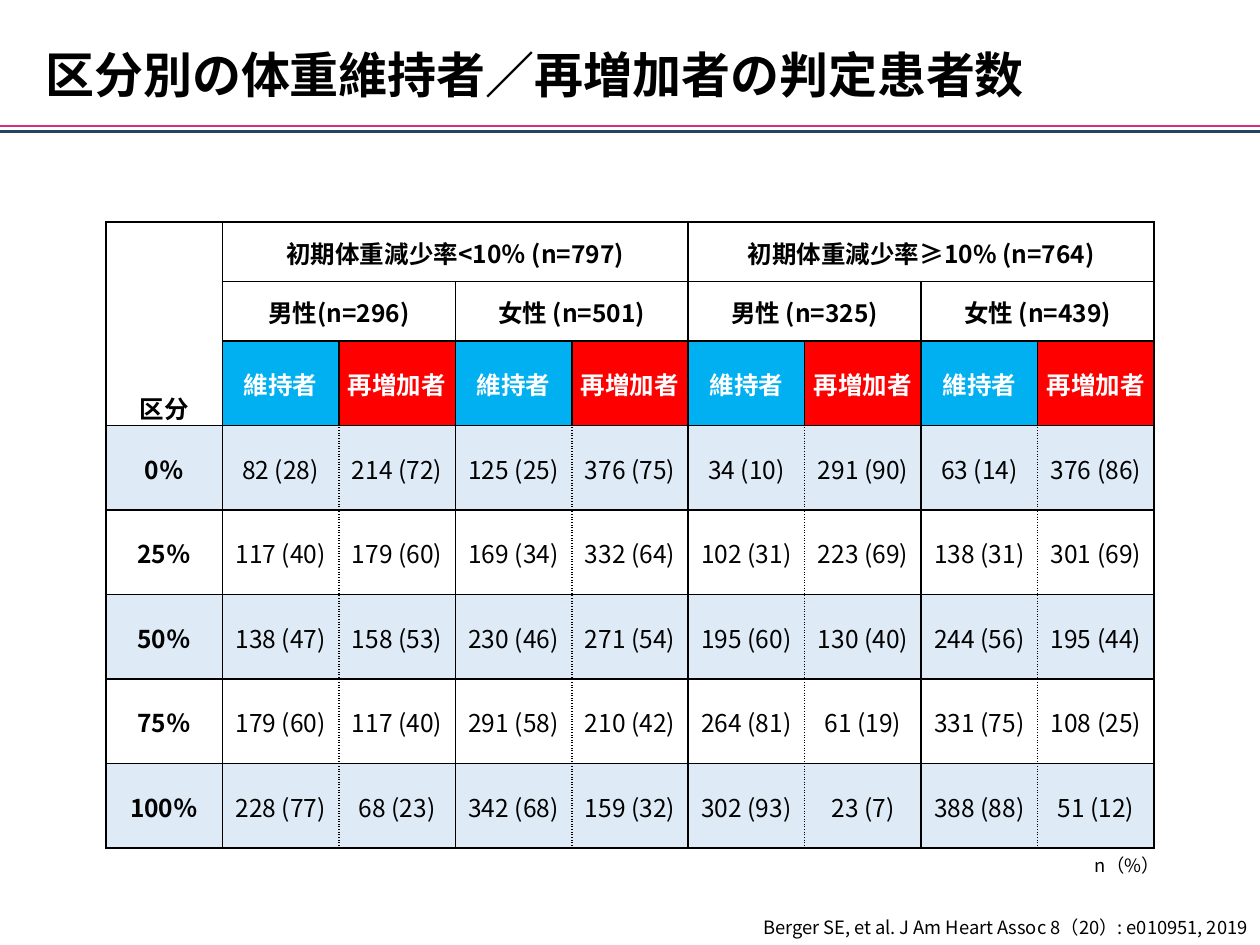
from lxml import etree
from pptx import Presentation
from pptx.dml.color import RGBColor
from pptx.enum import shapes, text
from pptx.oxml import ns
from pptx.util import Pt

FONT = "Noto Sans CJK JP"


def rgb(color):
    return RGBColor.from_string(color)


def style(tf, size, color="000000", bold=False, align=text.PP_ALIGN.LEFT):
    p = tf.paragraphs[0]
    p.alignment = align
    for r in p.runs:
        r.font.size, r.font.bold, r.font.name = Pt(size), bold, FONT
        r.font.color.rgb = rgb(color)
        etree.SubElement(r.font._element, ns.qn("a:ea"), typeface=FONT)


prs = Presentation()
prs.slide_width, prs.slide_height = Pt(720), Pt(540)
s = prs.slides.add_slide(prs.slide_layouts[5])

# Double rule under the title
for y, color in [(75, "224463"), (72, "D82B83")]:
    line = s.shapes.add_connector(shapes.MSO_CONNECTOR.STRAIGHT, 0, Pt(y), Pt(720), Pt(y))
    line.line.color.rgb = rgb(color)
    line.line.width = Pt(1.5)
    etree.SubElement(line._element.spPr, ns.qn("a:effectLst"))

# Title
title = s.shapes.title
title.left, title.top, title.width, title.height = Pt(18.72), Pt(21.6), Pt(580.3), Pt(41)
tf = title.text_frame
tf.text = "区分別の体重維持者／再増加者の判定患者数"
tf.word_wrap = False
tf.auto_size = text.MSO_AUTO_SIZE.SHAPE_TO_FIT_TEXT
tf.vertical_anchor = text.MSO_ANCHOR.MIDDLE
style(tf, 28, bold=True)

# Table content: merged headings as (row, column, rows, columns, wording)
headings = [
    (0, 0, 3, 1, "区分"),
    (0, 1, 1, 4, "初期体重減少率<10％ (n=797)"),
    (0, 5, 1, 4, "初期体重減少率≥10% (n=764)"),
    (1, 1, 1, 2, "男性(n=296)"),
    (1, 3, 1, 2, "女性 (n=501)"),
    (1, 5, 1, 2, "男性 (n=325)"),
    (1, 7, 1, 2, "女性 (n=439)"),
]
body = [
    ["0％", "82 (28)", "214 (72)", "125 (25)", "376 (75)",
     "34 (10)", "291 (90)", "63 (14)", "376 (86)"],
    ["25％", "117 (40)", "179 (60)", "169 (34)", "332 (64)",
     "102 (31)", "223 (69)", "138 (31)", "301 (69)"],
    ["50％", "138 (47)", "158 (53)", "230 (46)", "271 (54)",
     "195 (60)", "130 (40)", "244 (56)", "195 (44)"],
    ["75％", "179 (60)", "117 (40)", "291 (58)", "210 (42)",
     "264 (81)", "61 (19)", "331 (75)", "108 (25)"],
    ["100％", "228 (77)", "68 (23)", "342 (68)", "159 (32)",
     "302 (93)", "23 (7)", "388 (88)", "51 (12)"],
]
rows = [[""] * 9, [""] * 9, [""] + ["維持者", "再増加者"] * 4] + body
for row, col, _, _, wording in headings:
    rows[row][col] = wording

# Table grid
table = s.shapes.add_table(8, 9, Pt(60.48), Pt(126.9), Pt(599), Pt(357.8)).table
table.first_row = table.horz_banding = False
for col in table.columns:
    col.width = Pt(66.56)
for i, row in enumerate(table.rows):
    row.height = Pt(34 if i < 2 else 48.3)
for row, col, height, width, _ in headings:
    table.cell(row, col).merge(table.cell(row + height - 1, col + width - 1))

# Cells: text, borders and fill
for i, values in enumerate(rows):
    for j, value in enumerate(values):
        cell = table.cell(i, j)
        label = i == 2 and j > 0
        cell.margin_left = cell.margin_top = cell.margin_right = Pt(0.7)
        cell.margin_bottom = 0
        cell.vertical_anchor = text.MSO_ANCHOR.BOTTOM if i == j == 0 else text.MSO_ANCHOR.MIDDLE
        cell.text_frame.text = value
        style(cell.text_frame, 14, "FFFFFF" if label else "000000",
              i < 3 or j == 0, text.PP_ALIGN.CENTER)

        # Dotted between the two columns of each pair, solid elsewhere
        dotted = "R" if j % 2 else "L"
        for side in "LRTB":
            ln = etree.SubElement(cell._tc.get_or_add_tcPr(), ns.qn("a:ln" + side), w=str(Pt(1)))
            fill = etree.SubElement(ln, ns.qn("a:solidFill"))
            etree.SubElement(fill, ns.qn("a:srgbClr"), val="000000")
            dash = "sysDot" if i > 2 and j > 0 and side == dotted else "solid"
            etree.SubElement(ln, ns.qn("a:prstDash"), val=dash)

        if label:
            color = "00B0F0" if j % 2 else "FF0000"
        else:
            color = "DEEBF7" if i > 2 and i % 2 else None
        if color:
            cell.fill.solid()
            cell.fill.fore_color.rgb = rgb(color)
        else:
            cell.fill.background()

# Source and unit notes
notes = [
    (335.5, 519.8, 384.5, "Berger SE, et al. J Am Heart Assoc 8（20）: e010951, 2019"),
    (599, 484.6, 70.6, "n（%）"),
]
for x, y, width, wording in notes:
    sp = s.shapes.add_textbox(Pt(x), Pt(y), Pt(width), Pt(20))
    tf = sp.text_frame
    tf.text = wording
    tf.word_wrap = True
    tf.auto_size = text.MSO_AUTO_SIZE.SHAPE_TO_FIT_TEXT
    style(tf, 10.5, align=text.PP_ALIGN.RIGHT)

prs.save("out.pptx")
